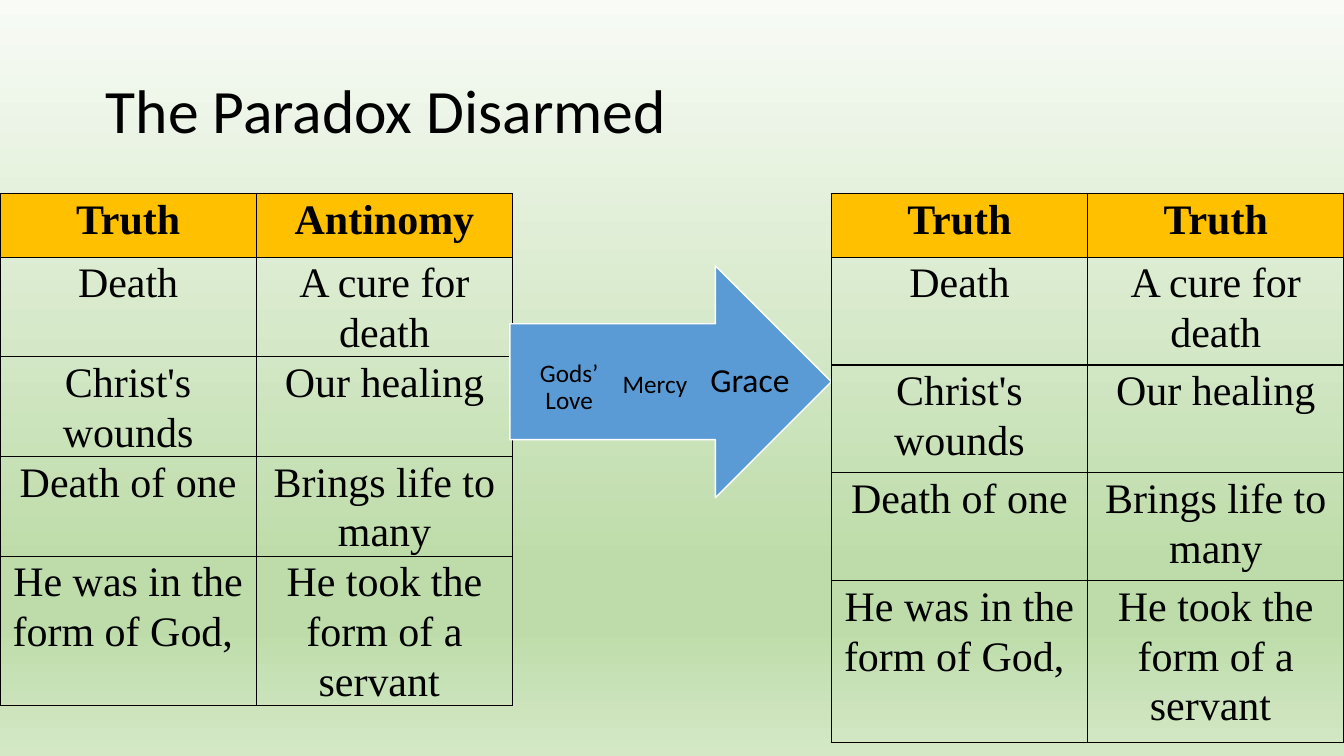
from dataclasses import dataclass

from lxml.etree import SubElement
from pptx import Presentation
from pptx.dml.color import RGBColor
from pptx.enum.shapes import MSO_SHAPE
from pptx.enum.text import MSO_ANCHOR, MSO_AUTO_SIZE, PP_ALIGN
from pptx.oxml.ns import qn
from pptx.slide import Slide
from pptx.table import _Cell
from pptx.text.text import TextFrame
from pptx.util import Cm, Pt

BLACK = RGBColor(0x00, 0x00, 0x00)
WHITE = RGBColor(0xFF, 0xFF, 0xFF)
GOLD = RGBColor(0xFF, 0xC0, 0x00)
BLUE = RGBColor(0x5B, 0x9B, 0xD5)
PALE_GREEN = RGBColor(0xF8, 0xFB, 0xF6)
MID_GREEN = RGBColor(0xBE, 0xDC, 0xAA)
LIGHT_GREEN = RGBColor(0xD4, 0xE8, 0xC6)

BACKGROUND_STOPS = [(0, PALE_GREEN), (74, MID_GREEN), (83, MID_GREEN), (100, LIGHT_GREEN)]
BODY_FONT = "Calibri"
TABLE_FONT = "Times New Roman"

# Table measures in centimetres
TABLE_TOP = 4.88
COLUMN_WIDTH = 6.46
ROW_HEIGHTS = [1.6, 2.5, 2.5, 2.5, 3.75]

STATEMENTS = [
    ("Death", "A cure for death"),
    ("Christ's wounds", "Our healing"),
    ("Death of one", "Brings life to many"),
    ("He was in the form of God, ", "He took the form of a servant "),
]


@dataclass
class StatementTable:
    left: float
    headings: tuple[str, str]


@dataclass
class ArrowLabel:
    text: str
    left: float
    top: float
    width: float
    height: float
    size: int


PARADOX_TABLE = StatementTable(0, ("Truth", "Antinomy"))
RESOLVED_TABLE = StatementTable(20.95, ("Truth", "Truth"))

ARROW_LABELS = [
    ArrowLabel("Grace", 17.81, 8.86, 2.18, 1.5, 24),
    ArrowLabel("Mercy", 15.54, 8.94, 1.93, 1.55, 18),
    ArrowLabel("Gods’ Love", 13.34, 8.99, 2.01, 1.55, 18),
]


def write_text(frame: TextFrame, text: str, font_name: str, size: int,
               alignment: PP_ALIGN, line_spacing: float, bold: bool = False) -> None:
    paragraph = frame.paragraphs[0]
    paragraph.alignment = alignment
    paragraph.line_spacing = line_spacing
    run = paragraph.add_run()
    run.text = text
    run.font.name = font_name
    run.font.size = Pt(size)
    run.font.bold = bold
    run.font.color.rgb = BLACK


def paint_background(slide: Slide) -> None:
    fill = slide.background.fill
    fill.gradient()
    fill.gradient_angle = 270
    stop_list = slide.background._cSld.find(".//" + qn("a:gsLst"))
    stop_list.clear()
    for percent, color in BACKGROUND_STOPS:
        stop = SubElement(stop_list, qn("a:gs"), pos=str(percent * 1000))
        SubElement(stop, qn("a:srgbClr"), val=str(color))


def add_borders(cell: _Cell) -> None:
    properties = cell._tc.get_or_add_tcPr()
    for side in ("a:lnL", "a:lnR", "a:lnT", "a:lnB"):
        line = SubElement(properties, qn(side), w=str(Pt(1)))
        fill = SubElement(line, qn("a:solidFill"))
        SubElement(fill, qn("a:srgbClr"), val=str(BLACK))


def add_statement_table(slide: Slide, layout: StatementTable) -> None:
    rows = [layout.headings, *STATEMENTS]
    table = slide.shapes.add_table(
        len(rows), 2, Cm(layout.left), Cm(TABLE_TOP),
        Cm(2 * COLUMN_WIDTH), Cm(sum(ROW_HEIGHTS))).table
    table.horz_banding = False
    for column in table.columns:
        column.width = Cm(COLUMN_WIDTH)
    for row_index, (texts, height) in enumerate(zip(rows, ROW_HEIGHTS)):
        is_heading = row_index == 0
        table.rows[row_index].height = Cm(height)
        for column_index, text in enumerate(texts):
            cell = table.cell(row_index, column_index)
            cell.margin_left = cell.margin_right = Cm(0.18)
            cell.margin_top = cell.margin_bottom = 0
            add_borders(cell)
            if is_heading:
                cell.fill.solid()
                cell.fill.fore_color.rgb = GOLD
            else:
                cell.fill.background()
            write_text(cell.text_frame, text, TABLE_FONT, 30, PP_ALIGN.CENTER, 1.07, is_heading)


def add_arrow(slide: Slide) -> None:
    arrow = slide.shapes.add_shape(
        MSO_SHAPE.RIGHT_ARROW, Cm(12.85), Cm(6.7), Cm(8.1), Cm(5.84))
    arrow.shadow.inherit = False
    arrow.fill.solid()
    arrow.fill.fore_color.rgb = BLUE
    arrow.line.color.rgb = WHITE
    arrow.line.width = Pt(1)


def add_arrow_label(slide: Slide, label: ArrowLabel) -> None:
    box = slide.shapes.add_textbox(
        Cm(label.left), Cm(label.top), Cm(label.width), Cm(label.height))
    frame = box.text_frame
    frame.word_wrap = True
    frame.vertical_anchor = MSO_ANCHOR.MIDDLE
    frame.margin_left = frame.margin_right = frame.margin_top = frame.margin_bottom = 0
    write_text(frame, label.text, BODY_FONT, label.size, PP_ALIGN.CENTER, 0.9)


def add_title(slide: Slide) -> None:
    title = slide.shapes.title
    title.left, title.top, title.width, title.height = Cm(2.41), Cm(1.02), Cm(29.21), Cm(3.68)
    frame = title.text_frame
    frame.word_wrap = True
    frame.auto_size = MSO_AUTO_SIZE.NONE
    frame.vertical_anchor = MSO_ANCHOR.MIDDLE
    write_text(frame, "The Paradox Disarmed", BODY_FONT, 44, PP_ALIGN.LEFT, 0.9)


def main() -> None:
    presentation = Presentation()
    presentation.slide_width = Cm(33.87)
    presentation.slide_height = Cm(19.05)
    slide = presentation.slides.add_slide(presentation.slide_layouts[5])

    # Background and title
    paint_background(slide)
    add_title(slide)

    # Paradox, the arrow that resolves it, and the result
    add_statement_table(slide, PARADOX_TABLE)
    add_arrow(slide)
    for label in ARROW_LABELS:
        add_arrow_label(slide, label)
    add_statement_table(slide, RESOLVED_TABLE)

    presentation.save("out.pptx")


if __name__ == "__main__":
    main()
